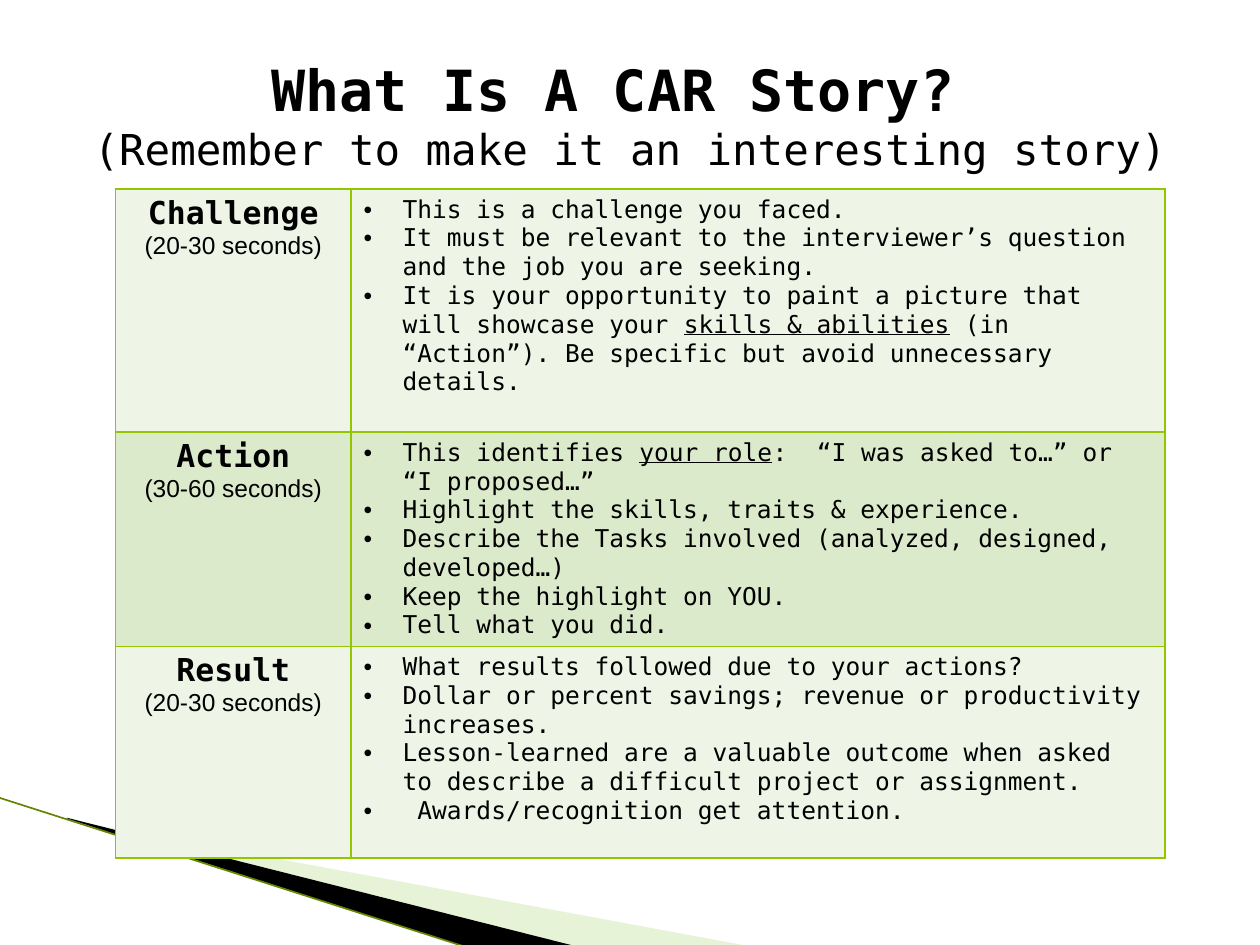
"""Build the CAR story slide: a title, a three-row table and a corner swoosh."""
import lxml.etree
import pptx
import pptx.dml.color
import pptx.enum.shapes
import pptx.enum.text
import pptx.oxml.ns
import pptx.util

TITLE = "What Is A CAR Story? "
SUBTITLE = "(Remember to make it an interesting story)"
STORY = [
    ("Challenge", "(20-30 seconds)", 1.93, [
        "This is a challenge you faced.",
        "It must be relevant to the interviewer’s question and the job you are seeking.",
        "It is your opportunity to paint a picture that will showcase your |skills & abilities|"
        " (in “Action”). Be specific but avoid unnecessary details."]),
    ("Action", "(30-60 seconds)", 1.7, [
        "This identifies |your role|:  “I was asked to…” or “I proposed…”",
        "Highlight the skills, traits & experience.",
        "Describe the Tasks involved (analyzed, designed, developed…)",
        "Keep the highlight on YOU.",
        "Tell what you did."]),
    ("Result", "(20-30 seconds)", 1.68, [
        "What results followed due to your actions?",
        "Dollar or percent savings; revenue or productivity increases.",
        "Lesson-learned are a valuable outcome when asked to describe a difficult project"
        " or assignment.",
        " Awards/recognition get attention."]),
]
COLUMNS = (1.87, 6.46)
TABLE_CORNER = (11 / 12, 1.5)
SWOOSH = [
    ("C3E19D", 40, [(0.55, 6.51), (5.95, 7.51), (4.56, 7.51), (0.55, 6.5)]),
    ("000000", 100, [(0.53, 6.49), (4.57, 7.51), (3.72, 7.52), (0.54, 6.5)]),
]
EDGE = (-0.01, 6.33, 3.71, 7.52)
THEME = {
    "mono": "DejaVu Sans Mono", "sans": "Arial", "ink": "000000",
    "border": "94C600", "edge": "638500", "bands": ("EEF5E7", "DCEACC"),
    "title": 32.4, "subtitle": 24.3, "heading": 18, "body": 14,
}
INCH = pptx.util.Inches
CENTER = pptx.enum.text.PP_ALIGN.CENTER


def color(value):
    return pptx.dml.color.RGBColor.from_string(value)


def add_child(parent, tag, **attributes):
    return lxml.etree.SubElement(parent, pptx.oxml.ns.qn(tag), attributes)


def write(para, text, size="body", face="mono", bold=False, underline=False):
    span = para.add_run()
    span.text = text
    span.font.name = THEME[face]
    span.font.size = pptx.util.Pt(THEME[size])
    span.font.bold = bold
    span.font.underline = underline
    span.font.color.rgb = color(THEME["ink"])


def add_title(page):
    box = page.shapes.title
    box.left, box.top, box.width, box.height = map(INCH, (0.5, 0.39, 9, 1.03))
    box.text_frame.vertical_anchor = pptx.enum.text.MSO_ANCHOR.MIDDLE
    box.text_frame.auto_size = pptx.enum.text.MSO_AUTO_SIZE.NONE
    para = box.text_frame.paragraphs[0]
    para.alignment = CENTER
    write(para, TITLE, size="title", bold=True)
    para.add_line_break()
    write(para, SUBTITLE, size="subtitle")


def add_swoosh(page):
    for fill, opacity, corners in SWOOSH:
        points = [(INCH(x), INCH(y)) for x, y in corners]
        builder = page.shapes.build_freeform(*points[0])
        builder.add_line_segments(points[1:], close=True)
        shape = builder.convert_to_shape()
        shape.shadow.inherit = False
        shape.line.fill.background()
        shape.fill.solid()
        shape.fill.fore_color.rgb = color(fill)
        if opacity < 100:
            tone = shape.fill._xPr.find(".//" + pptx.oxml.ns.qn("a:srgbClr"))
            add_child(tone, "a:alpha", val=str(opacity * 1000))
    edge = page.shapes.add_connector(
        pptx.enum.shapes.MSO_CONNECTOR.STRAIGHT, *map(INCH, EDGE))
    edge.line.color.rgb = color(THEME["edge"])
    edge.line.width = pptx.util.Pt(0.95)
    add_child(edge._element.spPr, "a:effectLst")


def style_cell(cell, fill):
    properties = cell._tc.get_or_add_tcPr()
    for side in ("a:lnL", "a:lnR", "a:lnT", "a:lnB"):
        line = add_child(properties, side, w=str(pptx.util.Pt(1)))
        add_child(add_child(line, "a:solidFill"), "a:srgbClr", val=THEME["border"])
    cell.fill.solid()
    cell.fill.fore_color.rgb = color(fill)


def next_para(frame, index):
    return frame.add_paragraph() if index else frame.paragraphs[0]


def fill_heading(cell, heading, duration):
    for index, text in enumerate((heading, duration)):
        para = next_para(cell.text_frame, index)
        para.alignment = CENTER
        if index:
            write(para, text, face="sans")
        else:
            write(para, text, size="heading", bold=True)


def fill_bullets(cell, bullets):
    indent = INCH(0.31)
    for index, bullet in enumerate(bullets):
        para = next_para(cell.text_frame, index)
        properties = para._p.get_or_add_pPr()
        properties.set("marL", str(indent))
        properties.set("indent", str(-indent))
        add_child(properties, "a:buFont", typeface=THEME["sans"])
        add_child(properties, "a:buChar", char="•")
        for part, text in enumerate(bullet.split("|")):
            write(para, text, underline=part % 2 == 1)


def add_story(page):
    heights = [row[2] for row in STORY]
    size = (sum(COLUMNS), sum(heights))
    frame = page.shapes.add_table(
        len(STORY), len(COLUMNS), *map(INCH, TABLE_CORNER + size))
    table = frame.table
    table.first_row = False
    for column, width in zip(table.columns, COLUMNS):
        column.width = INCH(width)
    for index, (heading, duration, height, bullets) in enumerate(STORY):
        table.rows[index].height = INCH(height)
        label, detail = table.rows[index].cells
        for cell in (label, detail):
            style_cell(cell, THEME["bands"][index % 2])
        fill_heading(label, heading, duration)
        fill_bullets(detail, bullets)


def main():
    deck = pptx.Presentation()
    deck.slide_width, deck.slide_height = INCH(10), INCH(7.5)
    page = deck.slides.add_slide(deck.slide_layouts[5])
    add_swoosh(page)
    add_story(page)
    add_title(page)
    deck.save("out.pptx")


if __name__ == "__main__":
    main()
